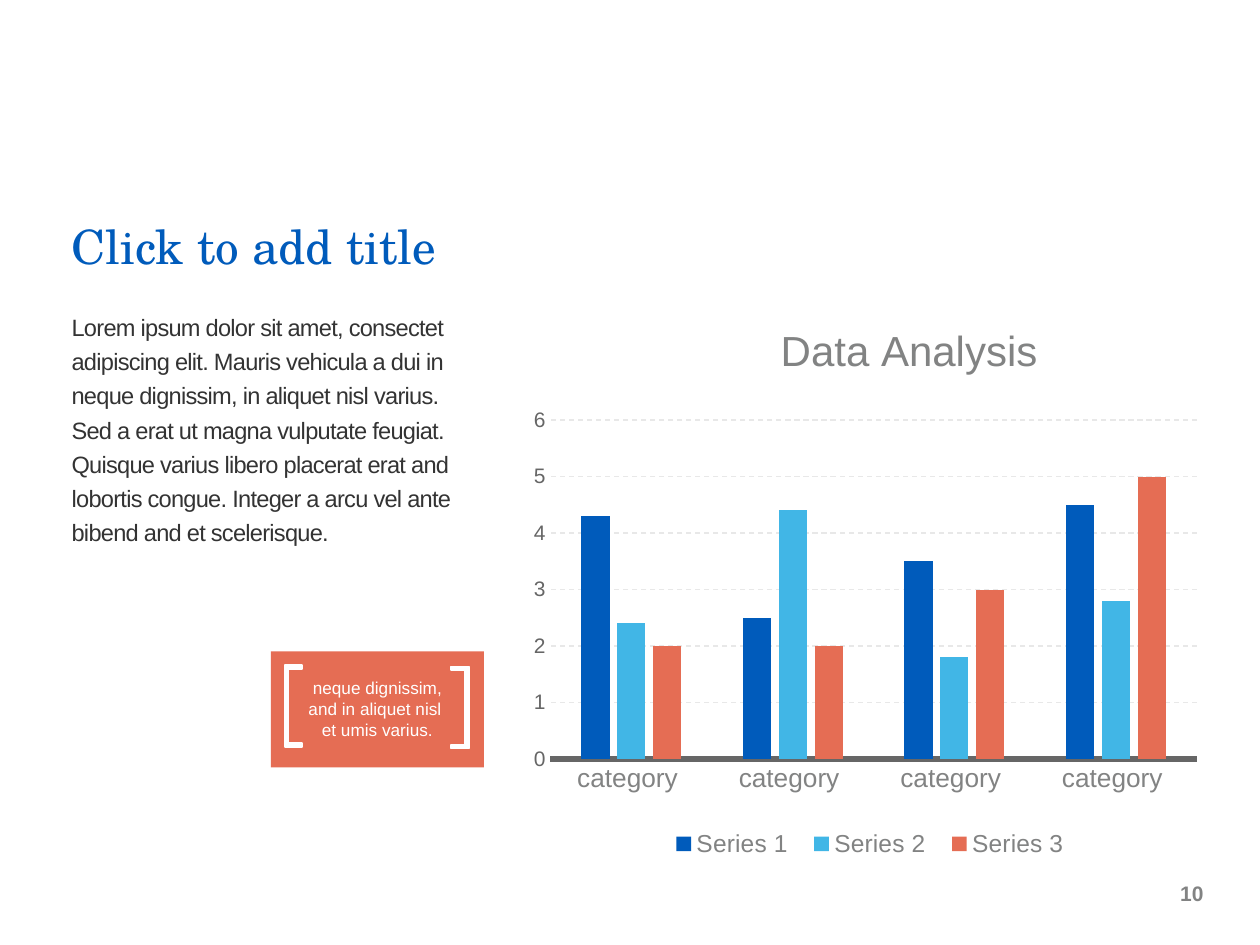
from copy import deepcopy

from lxml import etree
from pptx import Presentation
from pptx.chart.data import CategoryChartData
from pptx.dml.color import RGBColor
from pptx.enum.chart import XL_CHART_TYPE as ChartType, XL_LEGEND_POSITION as LegendPosition
from pptx.enum.chart import XL_TICK_MARK as TickMark
from pptx.enum.dml import MSO_LINE_DASH_STYLE as DashStyle
from pptx.enum.shapes import MSO_SHAPE as Shape
from pptx.enum.text import MSO_ANCHOR as Anchor, MSO_AUTO_SIZE as AutoSize, PP_ALIGN as Align
from pptx.oxml.ns import qn
from pptx.util import Inches, Pt

BLUE = RGBColor(0x00, 0x5B, 0xBB)
SKY = RGBColor(0x41, 0xB6, 0xE6)
CORAL = RGBColor(0xE5, 0x6D, 0x54)
WHITE = RGBColor(0xFF, 0xFF, 0xFF)
INK = RGBColor(0x33, 0x33, 0x33)
AXIS_GRAY = RGBColor(0x66, 0x66, 0x66)
LABEL_GRAY = RGBColor(0x82, 0x83, 0x83)
GRID_GRAY = RGBColor(0xE8, 0xE8, 0xE8)

BODY = (
    "Lorem ipsum dolor sit amet, consectet adipiscing elit. Mauris vehicula a dui in "
    "neque dignissim, in aliquet nisl varius. Sed a erat ut magna vulputate feugiat. "
    "Quisque varius libero placerat erat and lobortis congue. Integer a arcu vel ante "
    "bibend and et scelerisque."
)
CALLOUT = "neque dignissim, and in aliquet nisl \vet umis varius."
CATEGORIES = ["category "] * 4
SERIES = [
    ("Series 1", (4.3, 2.5, 3.5, 4.5), BLUE),
    ("Series 2", (2.4, 4.4, 1.8, 2.8), SKY),
    ("Series 3", (2, 2, 3, 5), CORAL),
]


def set_font(font, size, color, name="Arial", bold=False):
    font.name, font.size, font.bold = name, Pt(size), bold
    font.color.rgb = color


def add_title(page, text):
    title = page.shapes.title
    title.left, title.top = Inches(0.47), Inches(1.44)
    title.width, title.height = Inches(3.5), Inches(0.78)
    frame = title.text_frame
    frame.text = text
    frame.auto_size = AutoSize.NONE
    frame.vertical_anchor = Anchor.BOTTOM
    para = frame.paragraphs[0]
    para.alignment, para.line_spacing = Align.LEFT, 0.8
    set_font(para.runs[0].font, 27, BLUE, "TeX Gyre Schola")


def add_text(page, text, left, top, width, height, size, color,
             align=Align.LEFT, anchor=Anchor.TOP, bold=False, side_margin=0.1):
    box = page.shapes.add_textbox(Inches(left), Inches(top), Inches(width), Inches(height))
    frame = box.text_frame
    frame.word_wrap = True
    frame.vertical_anchor = anchor
    frame.margin_left = frame.margin_right = Inches(side_margin)
    frame.text = text
    para = frame.paragraphs[0]
    para.alignment = align
    for span in para.runs:
        set_font(span.font, size, color, bold=bold)
    # Line breaks take the size of the text around them
    for line_break in para._p.findall(qn("a:br")):
        line_break.append(deepcopy(para.runs[0].font._element))
    return para


def add_panel(page, left, top, width, height, color):
    panel = page.shapes.add_shape(
        Shape.RECTANGLE, Inches(left), Inches(top), Inches(width), Inches(height))
    panel.shadow.inherit = False
    panel.fill.solid()
    panel.fill.fore_color.rgb = color
    panel.line.fill.background()


def add_bracket(page, spine, top, direction):
    """Draw a square bracket whose arms point right (1) or left (-1)."""
    arm, height, stroke = 0.14, 0.65, 0.03
    outline = [(arm, 0), (0, 0), (0, height), (arm, height), (arm, height - stroke),
               (stroke, height - stroke), (stroke, stroke), (arm, stroke)]
    points = [(Inches(spine + direction * x), Inches(top + y)) for x, y in outline]
    builder = page.shapes.build_freeform(*points[0])
    builder.add_line_segments(points[1:], close=True)
    bracket = builder.convert_to_shape()
    bracket.shadow.inherit = False
    bracket.fill.solid()
    bracket.fill.fore_color.rgb = WHITE
    bracket.line.color.rgb = WHITE
    bracket.line.width = Pt(1)


def place(element, before, **values):
    """Give a chart part a manual layout, in fractions of the chart."""
    for old in element.findall(qn("c:layout")):
        element.remove(old)
    layout = etree.Element(qn("c:layout"))
    manual = etree.SubElement(layout, qn("c:manualLayout"))
    for name, value in values.items():
        etree.SubElement(manual, qn("c:" + name)).set("val", str(value))
    element.find(qn(before)).addprevious(layout)


def style_axes(chart):
    category_axis, value_axis = chart.category_axis, chart.value_axis
    for axis in (category_axis, value_axis):
        axis.major_tick_mark = axis.minor_tick_mark = TickMark.NONE
    set_font(category_axis.tick_labels.font, 15, LABEL_GRAY)
    category_axis.format.line.color.rgb = AXIS_GRAY
    category_axis.format.line.width = Pt(3.25)

    set_font(value_axis.tick_labels.font, 12, AXIS_GRAY)
    value_axis.minimum_scale, value_axis.maximum_scale = 0, 6
    value_axis.major_unit = 1
    value_axis.format.line.fill.background()
    grid = value_axis.major_gridlines.format.line
    grid.color.rgb = GRID_GRAY
    grid.width = Pt(0.75)
    grid.dash_style = DashStyle.DASH


def add_column_chart(page):
    data = CategoryChartData()
    data.categories = CATEGORIES
    for name, values, _ in SERIES:
        data.add_series(name, values)
    chart = page.shapes.add_chart(
        ChartType.COLUMN_CLUSTERED, Inches(3.97), Inches(2.51),
        Inches(5.7), Inches(4.34), data).chart
    set_font(chart.font, 10, AXIS_GRAY)

    # Title
    chart.has_title = True
    title = chart.chart_title
    title.text_frame.text = "Data Analysis"
    set_font(title.text_frame.paragraphs[0].runs[0].font, 24, LABEL_GRAY)
    title.include_in_layout = False
    place(title._element, "c:overlay", xMode="edge", yMode="edge", x=0.38, y=0)

    # Legend
    chart.has_legend = True
    legend = chart.legend
    legend.position = LegendPosition.BOTTOM
    legend.include_in_layout = False
    set_font(legend.font, 14, LABEL_GRAY)
    place(legend._element, "c:overlay", xMode="edge", yMode="edge",
          x=0.22, y=0.93, w=0.59, h=0.07)

    # Columns
    plot = chart.plots[0]
    plot.gap_width, plot.overlap = 219, -27
    plot.vary_by_categories = False
    for series, (_, _, color) in zip(plot.series, SERIES):
        series.format.fill.solid()
        series.format.fill.fore_color.rgb = color
    place(plot._element.getparent(), "c:barChart", layoutTarget="inner",
          xMode="edge", yMode="edge", x=0.07, y=0.19, w=0.9, h=0.62)
    style_axes(chart)


def main():
    deck = Presentation()
    deck.slide_width, deck.slide_height = Inches(10), Inches(7.5)
    page = deck.slides.add_slide(deck.slide_layouts[5])

    # Page number and chart
    add_text(page, "10", 9.06, 6.8, 0.59, 0.58, 12, LABEL_GRAY,
             Align.RIGHT, Anchor.MIDDLE, bold=True)
    add_column_chart(page)

    # Title and body
    add_title(page, "Click to add title")
    body = add_text(page, BODY, 0.47, 2.39, 3.28, 3.03, 13.5, INK)
    body.line_spacing = Pt(19.5)
    body.runs[0].font._element.set("spc", "-40")

    # Callout with brackets
    add_panel(page, 2.15, 5.17, 1.69, 0.92, CORAL)
    add_bracket(page, 2.26, 5.28, 1)
    add_bracket(page, 3.72, 5.29, -1)
    add_text(page, CALLOUT, 2.35, 5.33, 1.29, 0.59, 9.8, WHITE,
             Align.CENTER, side_margin=0.05)

    deck.save("out.pptx")


if __name__ == "__main__":
    main()
